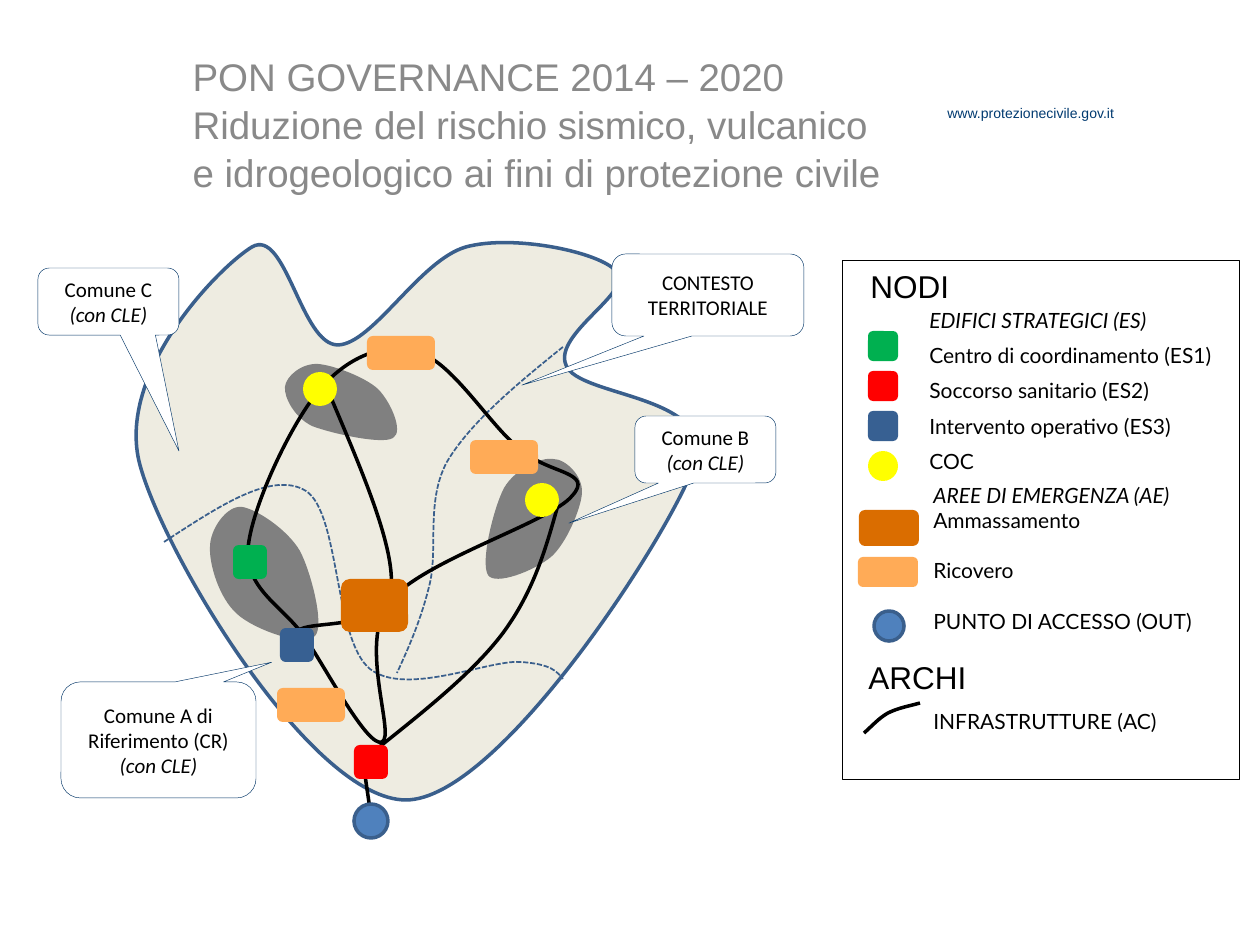
import pptx
import pptx.dml.color
import pptx.enum.dml
import pptx.enum.shapes
import pptx.enum.text
import pptx.oxml
import pptx.oxml.ns
import pptx.util
from lxml import etree

SCALE = 914400 / 126
SHAPES = pptx.enum.shapes.MSO_SHAPE
ALIGN = pptx.enum.text.PP_ALIGN
ANCHOR = pptx.enum.text.MSO_ANCHOR

BLACK, WHITE, GRAY = "000000", "FFFFFF", "808080"
GREEN, RED, BLUE, YELLOW = "00B050", "FF0000", "376092", "FFFF00"
ORANGE, LIGHT_ORANGE, ACCESS_BLUE, BORDER = "DA6D00", "FFAB57", "4F81BD", "3A5F8C"

TERRITORY = [(152, 47), (119, 67), (15, 173), (40, 265), (65, 357), (212, 600), (306, 600),
             (398, 600), (567, 339), (594, 266), (621, 194), (478, 198), (466, 165),
             (453, 134), (534, 92), (517, 72), (501, 52), (413, 34), (366, 47),
             (320, 60), (273, 144), (238, 145), (201, 145), (186, 27), (152, 47)]
BOUNDARIES = [
    [(64, 342), (118, 307), (172, 270), (206, 291), (240, 313), (234, 440), (270, 469),
     (306, 497), (388, 460), (420, 462), (452, 464), (457, 472), (463, 479)],
    [(463, 147), (417, 184), (370, 223), (347, 262), (326, 301), (338, 348), (330, 383),
     (322, 417), (310, 445), (297, 473)],
]
URBAN_AREAS = [
    [(453, 259), (441, 257), (415, 269), (404, 288), (394, 307), (380, 362), (388, 375),
     (395, 386), (434, 371), (451, 357), (466, 344), (481, 309), (482, 293),
     (483, 276), (466, 259), (453, 259)],
    [(185, 187), (184, 197), (194, 217), (212, 226), (230, 233), (282, 245), (293, 238),
     (304, 232), (291, 202), (278, 189), (265, 177), (233, 165), (218, 164),
     (202, 163), (186, 176), (185, 187)],
    [(110, 347), (109, 364), (119, 398), (137, 414), (153, 429), (204, 448), (215, 436),
     (225, 426), (211, 372), (200, 351), (187, 329), (156, 309), (142, 307),
     (127, 305), (110, 329), (110, 347)],
]
ROADS = [
    [(148, 349), (151, 308), (192, 221), (221, 188), (250, 155), (287, 141), (320, 153),
     (354, 163), (395, 233), (422, 250), (447, 274), (495, 271), (472, 296),
     (451, 322), (321, 361), (289, 402), (258, 444), (296, 536), (282, 542),
     (268, 548), (228, 472), (206, 439), (184, 406), (146, 391), (148, 349)],
    [(458, 305), (446, 348), (434, 391), (403, 433), (373, 473), (322, 513), (273, 552)],
    [(229, 193), (262, 271), (296, 349), (291, 390), (286, 429), (218, 421), (201, 429),
     (186, 435), (190, 433), (195, 431)],
]
LEGEND_ROAD = [(22, 472), (30, 465), (37, 457), (46, 452), (56, 447), (67, 445), (78, 442)]


def px(value):
    """Turn pixels into EMU."""
    return round(value * SCALE)


def rgb(color):
    """Turn a hex string into a colour."""
    return pptx.dml.color.RGBColor.from_string(color)


def paint(shape, fill=None, line=None, width=2, dash=False):
    """Set the fill and outline of a shape and drop its shadow."""
    shape.shadow.inherit = False
    if fill:
        shape.fill.solid()
        shape.fill.fore_color.rgb = rgb(fill)
    else:
        shape.fill.background()
    if line:
        shape.line.color.rgb = rgb(line)
        shape.line.width = pptx.util.Pt(width)
        if dash:
            shape.line.dash_style = pptx.enum.dml.MSO_LINE.SQUARE_DOT
    else:
        shape.line.fill.background()


def write(paragraph, text, size=12, font="Calibri", color=BLACK, italic=False,
          align=ALIGN.LEFT, before=0, spacing=None):
    """Append a formatted run to a paragraph."""
    run = paragraph.add_run()
    run.text = text
    run.font.size = pptx.util.Pt(size)
    run.font.name = font
    run.font.color.rgb = rgb(color)
    run.font.italic = italic
    paragraph.alignment = align
    paragraph.space_before = pptx.util.Pt(before)
    if spacing:
        paragraph.line_spacing = spacing


def write_lines(frame, lines, **style):
    """Write one paragraph for each pair of text and own format."""
    for index, (text, own) in enumerate(lines):
        paragraph = frame.add_paragraph() if index else frame.paragraphs[0]
        write(paragraph, text, **{**style, **own})


def add_text(slide, box, lines, **style):
    """Add a wrapping text box."""
    frame = slide.shapes.add_textbox(*map(px, box)).text_frame
    frame.word_wrap = True
    write_lines(frame, lines, **style)


def add_node(slide, kind, box, fill, **outline):
    """Add a painted preset shape."""
    shape = slide.shapes.add_shape(kind, *map(px, box))
    paint(shape, fill, **outline)
    return shape


def bezier(points, t):
    """Return the point of a cubic curve at t."""
    weights = ((1 - t) ** 3, 3 * t * (1 - t) ** 2, 3 * t ** 2 * (1 - t), t ** 3)
    return tuple(sum(w * p[axis] for w, p in zip(weights, points)) for axis in (0, 1))


def add_curve(slide, left, top, points, closed=False, **style):
    """Add a freeform of cubic curves sized to its visible extent."""
    points = [(px(left + x), px(top + y)) for x, y in points]
    segments = [points[i:i + 4] for i in range(0, len(points) - 1, 3)]
    builder = slide.shapes.build_freeform(*points[0])
    samples = [bezier(segment, step / 20) for segment in segments for step in range(1, 21)]
    builder.add_line_segments(samples, close=closed)
    shape = builder.convert_to_shape()
    outline = shape._element.find(".//" + pptx.oxml.ns.qn("a:path"))
    for child in list(outline)[1:]:
        outline.remove(child)
    for segment in segments:
        curve = etree.SubElement(outline, pptx.oxml.ns.qn("a:cubicBezTo"))
        for x, y in segment[1:]:
            etree.SubElement(curve, pptx.oxml.ns.qn("a:pt"),
                             x=str(x - shape.left), y=str(y - shape.top))
    if closed:
        etree.SubElement(outline, pptx.oxml.ns.qn("a:close"))
    paint(shape, **style)


def add_callout(slide, box, tip, text, note=None):
    """Add a rounded callout with an optional italic second line."""
    shape = add_node(slide, SHAPES.ROUNDED_RECTANGULAR_CALLOUT, box, WHITE,
                     line="003466", width=0.25)
    shape.adjustments[0], shape.adjustments[1] = tip
    frame = shape.text_frame
    frame.word_wrap = True
    frame.vertical_anchor = ANCHOR.MIDDLE
    paragraph = frame.paragraphs[0]
    write(paragraph, text, align=ALIGN.CENTER)
    if note:
        paragraph.add_line_break()
        write(paragraph, note, italic=True, align=ALIGN.CENTER)


def add_header(slide, left, top):
    """Place the title and the web address."""
    title = slide.shapes.title
    title.left, title.top, title.width, title.height = map(px, (left, top, 908, 152))
    frame = title.text_frame
    frame.word_wrap = True
    frame.auto_size = pptx.enum.text.MSO_AUTO_SIZE.NONE
    frame.vertical_anchor = ANCHOR.TOP
    lines = ("PON GOVERNANCE 2014 – 2020", "Riduzione del rischio sismico, vulcanico",
             "e idrogeologico ai fini di protezione civile")
    write_lines(frame, [(line, {}) for line in lines],
                size=22, font="Arial", color="898989", spacing=1.04)
    add_text(slide, (left + 755, top + 53, 215, 30), [("www.protezionecivile.gov.it", {})],
             size=8, font="Arial", color="003A70")


def add_map(slide, left, top):
    """Draw the territory with its roads, nodes and callouts."""
    add_curve(slide, left, top, TERRITORY, closed=True, fill="EEECE1", line=BORDER)
    for boundary in BOUNDARIES:
        add_curve(slide, left, top, boundary, line=BORDER, width=1, dash=True)
    for area in URBAN_AREAS:
        add_curve(slide, left, top, area, closed=True, fill=GRAY)
    for road in ROADS:
        add_curve(slide, left, top, road, line=BLACK)
    ends = (left + 265, top + 575, left + 272, top + 623)
    access = slide.shapes.add_connector(pptx.enum.shapes.MSO_CONNECTOR.STRAIGHT, *map(px, ends))
    access.line.color.rgb = rgb(BLACK)
    access.line.width = pptx.util.Pt(2)
    etree.SubElement(access._element.spPr, pptx.oxml.ns.qn("a:effectLst"))
    for x, y in ((267, 136), (370, 240), (177, 488)):
        add_node(slide, SHAPES.ROUNDED_RECTANGLE, (left + x, top + y, 68, 34), LIGHT_ORANGE)
    for x, y, color in ((133, 345, GREEN), (180, 428, BLUE), (254, 545, RED)):
        add_node(slide, SHAPES.ROUNDED_RECTANGLE, (left + x, top + y, 34, 34), color)
    for x, y in ((203, 172), (425, 283)):
        add_node(slide, SHAPES.OVAL, (left + x, top + y, 34, 34), YELLOW)
    add_node(slide, SHAPES.ROUNDED_RECTANGLE, (left + 241, top + 379, 67, 53), ORANGE)
    add_node(slide, SHAPES.OVAL, (left + 254, top + 604, 34, 34), ACCESS_BLUE, line=BORDER)
    note = "(con CLE)"
    for x, y, width, height, tip, *texts in (
            (535, 216, 141, 67, (-0.97, 1.1), "Comune B", note),
            (-62, 68, 141, 67, (0.5, 2.23), "Comune C", note),
            (-39, 482, 195, 116, (0.58, -0.67), "Comune A di Riferimento (CR)", note),
            (512, 54, 192, 82, (-0.97, 1.1), "CONTESTO TERRITORIALE")):
        add_callout(slide, (left + x, top + y, width, height), tip, *texts)


def add_legend(slide, left, top):
    """Draw the framed legend of nodes and arcs."""
    add_node(slide, SHAPES.RECTANGLE, (left, top, 397, 519), None, line=BLACK, width=0.5)
    for row, color in enumerate((GREEN, RED, BLUE, YELLOW)):
        kind = SHAPES.OVAL if color == YELLOW else SHAPES.ROUNDED_RECTANGLE
        add_node(slide, kind, (left + 26, top + 70 + 40 * row, 30, 30), color)
    add_node(slide, SHAPES.ROUNDED_RECTANGLE, (left + 17, top + 249, 60, 36), ORANGE)
    add_node(slide, SHAPES.ROUNDED_RECTANGLE, (left + 16, top + 296, 60, 30), LIGHT_ORANGE)
    add_node(slide, SHAPES.OVAL, (left + 32, top + 350, 30, 30), ACCESS_BLUE, line=BORDER)
    add_curve(slide, left, top, LEGEND_ROAD, line=BLACK)
    for x, y, heading in ((16, 0, "NODI"), (14, 391, "ARCHI")):
        add_text(slide, (left + x, top + y, 154, 50), [(heading, {})], size=18, font="Arial")
    add_text(slide, (left + 75, top + 31, 318, 189), [
        ("EDIFICI STRATEGICI (ES)", {"italic": True}), ("Centro di coordinamento (ES1)", {}),
        ("Soccorso sanitario (ES2)", {}), ("Intervento operativo (ES3)", {}), ("COC", {}),
    ], font="Lato", spacing=pptx.util.Pt(20))
    add_text(slide, (left + 79, top + 215, 300, 292), [
        ("AREE DI EMERGENZA (AE)", {"italic": True}), ("Ammassamento", {}),
        ("Ricovero", {"before": 14.4}), ("PUNTO DI ACCESSO (OUT)", {"before": 14.4}),
        ("INFRASTRUTTURE (AC)", {"before": 43.2}),
    ], font="Lato")


def main():
    """Build and save the presentation."""
    presentation = pptx.Presentation()
    presentation.slide_width, presentation.slide_height = px(1260), px(945)
    slide = presentation.slides.add_slide(presentation.slide_layouts[5])
    add_header(slide, 180, 45)
    add_map(slide, 100, 200)
    add_legend(slide, 842, 261)
    presentation.save("out.pptx")


if __name__ == "__main__":
    main()
